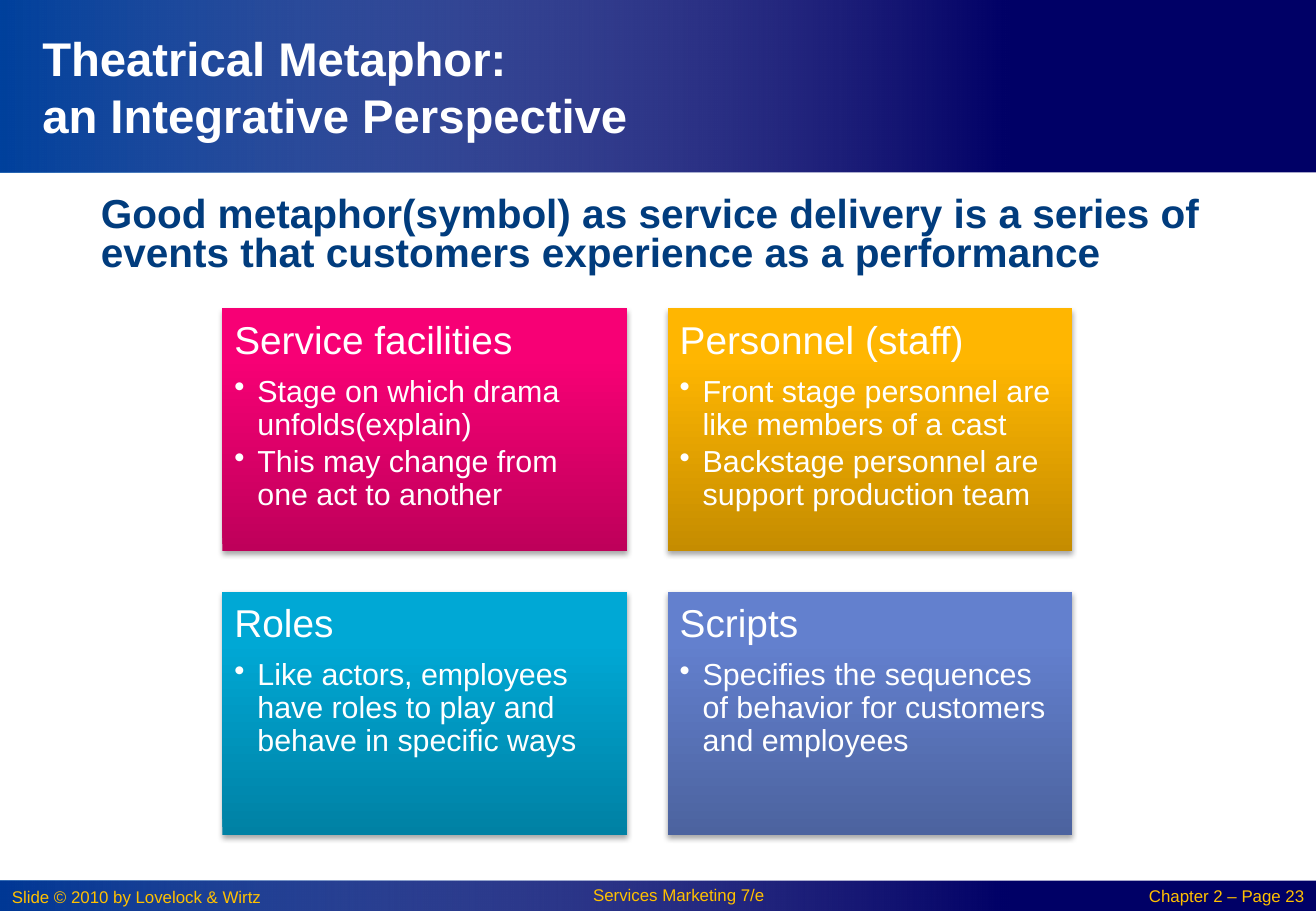
from pptx import Presentation
from pptx.dml.color import RGBColor
from pptx.enum.shapes import MSO_SHAPE
from pptx.enum.text import MSO_ANCHOR, PP_ALIGN
from pptx.oxml import parse_xml
from pptx.oxml.ns import nsdecls
from pptx.util import Inches, Pt

RECT = MSO_SHAPE.RECTANGLE
TOP, MID = MSO_ANCHOR.TOP, MSO_ANCHOR.MIDDLE
LEFT, CENTER, RIGHT = PP_ALIGN.LEFT, PP_ALIGN.CENTER, PP_ALIGN.RIGHT
FONT, NAVY, BLUE, WHITE, GOLD = "Arial", "000066", "0152AB", "FFFFFF", "FFC000"
WIDE, HIGH, FADE = 10.83, 7.5, 8.33

TITLE = ["Theatrical Metaphor:", "an Integrative Perspective"]
LEAD = ("Good metaphor(symbol) as service delivery is a series of "
        "events that customers experience as a performance")
BANDS = [(7.25, 0.25, 69), (0, 1.42, 80)]
FOOT = [
    ("Slide © 2010 by Lovelock & Wirtz", (0, 7.25, 2.58, 0.28), LEFT, 1),
    ("Services Marketing 7/e", (4.25, 7.25, 2.67, 0.25), CENTER, 0.9),
    ("Chapter 2 – Page 23", (9.08, 7.26, 1.75, 0.25), RIGHT, 0.9),
]
CARDS = [
    ("Service facilities", ("BE005A", "F70075", "F80076"),
     ["Stage on which drama unfolds(explain)",
      "This may change from one act to another"]),
    ("Personnel (staff)", ("C58C00", "FFB601", "FFB602"),
     ["Front stage personnel are like members of a cast",
      "Backstage personnel are support production team"]),
    ("Roles", ("0081A4", "00A8D5", "00A8D6"),
     ["Like actors, employees have roles to play and behave in specific ways"]),
    ("Scripts", ("4C639F", "6380CE", "6180D1"),
     ["Specifies the sequences of behavior for customers and employees"]),
]
CARD_W, CARD_H, GAP = 3.33, 2, 0.335
CARD_X, CARD_Y = 1.83, 2.54

deck = Presentation()
deck.slide_width, deck.slide_height = Inches(WIDE), Inches(HIGH)
slide = deck.slides.add_slide(deck.slide_layouts[6])


def paint(color):
    return RGBColor.from_string(color)


def block(at, color=None):
    shape = slide.shapes.add_shape(RECT, *map(Inches, at))
    shape.shadow.inherit = False
    shape.line.fill.background()
    if color:
        shape.fill.solid()
        shape.fill.fore_color.rgb = paint(color)
    return shape


def blend(shape, stops, angle):
    marks = "".join(
        f'<a:gs pos="{pos * 1000}"><a:srgbClr val="{color}">'
        f'<a:alpha val="{alpha * 1000}"/></a:srgbClr></a:gs>'
        for pos, color, alpha in stops)
    grad = parse_xml(
        f'<a:gradFill {nsdecls("a")} rotWithShape="1"><a:gsLst>{marks}</a:gsLst>'
        f'<a:lin ang="{angle * 60000}" scaled="0"/></a:gradFill>')
    shape.fill.background()
    props = shape._element.spPr
    old = props.find("{*}noFill")
    props.replace(old, grad)


def shade(shape):
    shape._element.spPr.find("{*}effectLst").append(parse_xml(
        f'<a:outerShdw {nsdecls("a")} blurRad="{Pt(3.1)}" dist="{Pt(1.8)}" '
        'dir="5400000" rotWithShape="0"><a:srgbClr val="000000">'
        '<a:alpha val="35000"/></a:srgbClr></a:outerShdw>'))


def setup(frame, inset=(0.1, 0.05), anchor=TOP):
    frame.word_wrap = True
    frame.vertical_anchor = anchor
    frame.margin_left = frame.margin_right = Inches(inset[0])
    frame.margin_top = frame.margin_bottom = Inches(inset[1])
    return frame


def box(at, **style):
    return setup(slide.shapes.add_textbox(*map(Inches, at)).text_frame, **style)


def write(frame, text, size=18, color=WHITE, bold=False, align=LEFT,
          lines=1, after=0, bullet=False):
    para = frame.paragraphs[0]
    if para.runs:
        para = frame.add_paragraph()
    para.alignment = align
    para.line_spacing = lines
    para.space_after = Pt(after)
    if bullet:
        props = para._p.get_or_add_pPr()
        props.set("marL", str(Inches(0.19)))
        props.set("indent", str(-Inches(0.19)))
        props.append(parse_xml(f'<a:buChar {nsdecls("a")} char="•"/>'))
    run = para.add_run()
    run.text = text
    font = run.font
    font.name, font.size, font.bold = FONT, Pt(size), bold
    font.color.rgb = paint(color)


for top, tall, alpha in BANDS:
    block((0, top, WIDE, tall), NAVY)
    blend(block((0, top, FADE, tall)), [(0, BLUE, alpha), (100, WHITE, 0)], 0)

for text, at, align, lines in FOOT:
    write(box(at), text, size=10, color=GOLD, align=align, lines=lines)

head = box((0.25, 0.25, 7, 0.92), anchor=MID)
for text in TITLE:
    write(head, text, size=28, bold=True)

lead = box((0.74, 1.58, 10, 0.75), inset=(0.09, 0.05))
write(lead, LEAD, size=24, color="013C7D", bold=True, lines=0.8)

for i, (name, colors, points) in enumerate(CARDS):
    row, col = divmod(i, 2)
    left = CARD_X + col * (CARD_W + GAP)
    top = CARD_Y + row * (CARD_H + GAP)
    card = block((left, top, CARD_W, CARD_H))
    blend(card, [(pos, c, 100) for pos, c in zip((0, 80, 100), colors)], 270)
    shade(card)
    frame = setup(card.text_frame, inset=(0.1, 0.1))
    write(frame, name, size=23, lines=0.9, after=8)
    for text in points:
        write(frame, text, lines=0.9, after=3, bullet=True)

deck.save("out.pptx")
